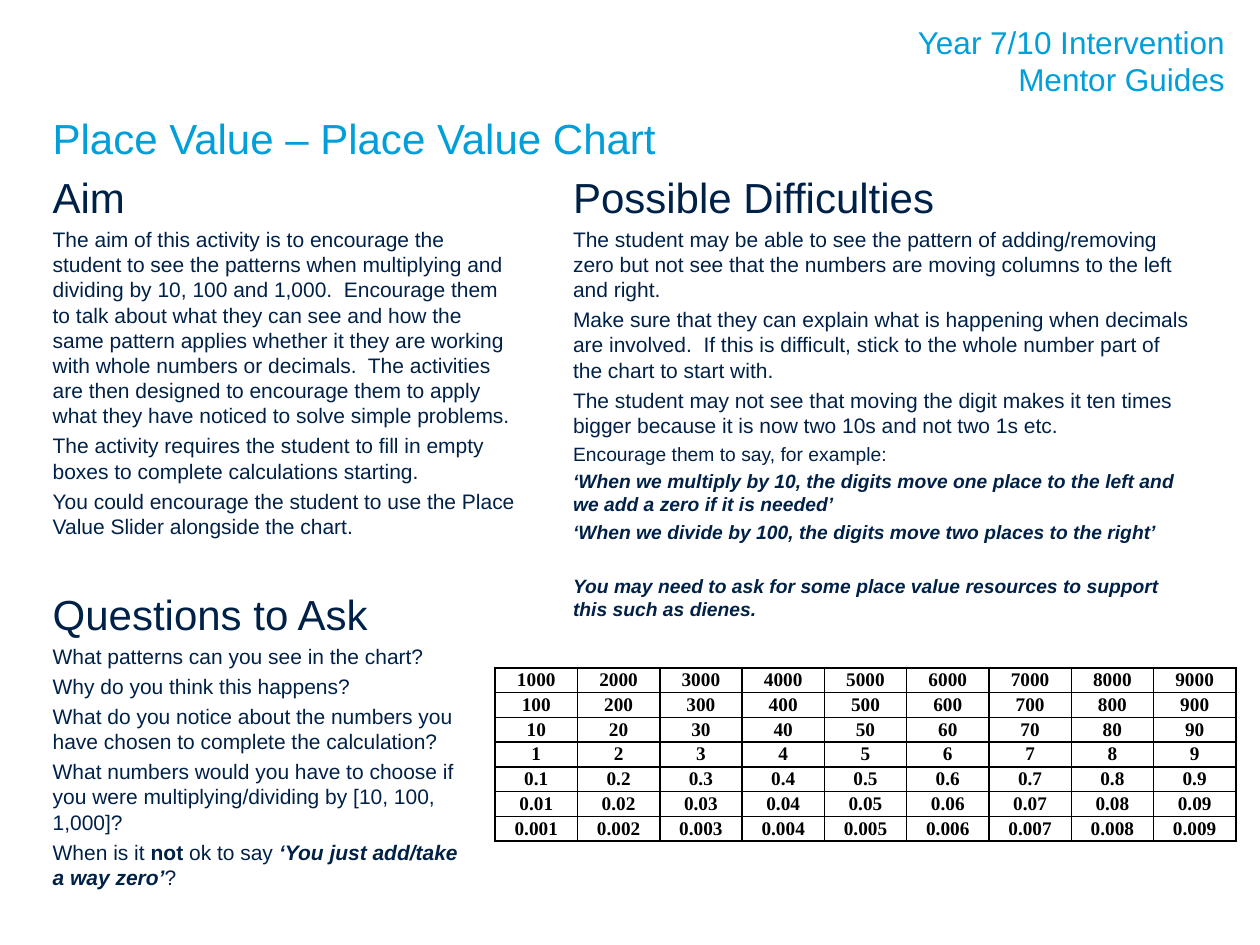
from dataclasses import dataclass, field

from lxml import etree
from pptx import Presentation
from pptx import util as u
from pptx.dml.color import RGBColor
from pptx.enum import text
from pptx.oxml import ns

COLOURS = {"heading": "009FDA", "body": "002147", "table": "000000"}
BODY_FONT = "Arial"
TABLE_FONT = "Times New Roman"
LINE_HEIGHT = 1.15
SPACE_SHARE = 0.2


@dataclass
class Run:
    words: str
    bold: bool = False
    italic: bool = False


@dataclass
class Paragraph:
    runs: list[Run]
    size: float = 12
    skip_line: bool = False


@dataclass
class TextPanel:
    left: float
    top: float
    width: float
    height: float
    paragraphs: list[Paragraph] = field(default_factory=list)
    colour: str = "body"
    alignment: text.PP_ALIGN = text.PP_ALIGN.LEFT


def plain(words: str, size: float = 12) -> Paragraph:
    return Paragraph([Run(words)], size)


def emphasised(words: str, skip_line: bool = False) -> Paragraph:
    return Paragraph([Run(words, True, True)], 11, skip_line)


PANELS = [
    TextPanel(0.32, 0.84, 9, 0.64, [plain("Place Value – Place Value Chart", 24)], "heading"),
    TextPanel(0.32, 1.31, 3.87, 3.31, [
        plain("Aim", 24),
        plain("The aim of this activity is to encourage the student to see the patterns "
              "when multiplying and dividing by 10, 100 and 1,000.  Encourage them to talk "
              "about what they can see and how the same pattern applies whether it they are "
              "working with whole numbers or decimals.  The activities are then designed to "
              "encourage them to apply what they have noticed to solve simple problems."),
        plain("The activity requires the student to fill in empty boxes to complete "
              "calculations starting."),
        plain("You could encourage the student to use the Place Value Slider alongside "
              "the chart."),
    ]),
    TextPanel(0.32, 4.62, 3.44, 2.54, [
        plain("Questions to Ask", 24),
        plain("What patterns can you see in the chart?"),
        plain("Why do you think this happens?"),
        plain("What do you notice about the numbers you have chosen to complete the "
              "calculation?"),
        plain("What numbers would you have to choose if you were multiplying/dividing by "
              "[10, 100, 1,000]?"),
        Paragraph([
            Run("When is it "),
            Run("not", bold=True),
            Run(" ok to say "),
            Run("‘You just add/take a way zero’", bold=True, italic=True),
            Run("?"),
        ]),
    ]),
    TextPanel(4.45, 1.31, 5.13, 3.73, [
        plain("Possible Difficulties", 24),
        plain("The student may be able to see the pattern of adding/removing zero but not "
              "see that the numbers are moving columns to the left and right."),
        plain("Make sure that they can explain what is happening when decimals are "
              "involved.  If this is difficult, stick to the whole number part of the chart "
              "to start with."),
        plain("The student may not see that moving the digit makes it ten times bigger "
              "because it is now two 10s and not two 1s etc."),
        plain("Encourage them to say, for example:", 11),
        emphasised("‘When we multiply by 10, the digits move one place to the left and we "
                   "add a zero if it is needed’"),
        emphasised("‘When we divide by 100, the digits move two places to the right’"),
        emphasised("You may need to ask for some place value resources to support this "
                   "such as dienes.", skip_line=True),
    ]),
    TextPanel(6.42, 0.13, 3.4, 0.71, [plain("Year 7/10 Intervention\nMentor Guides", 18)],
              "heading", text.PP_ALIGN.RIGHT),
]


def style_font(font, name: str, size: float, colour: str, bold: bool, italic: bool) -> None:
    font.name = name
    font.size = u.Pt(size)
    font.bold = bold
    font.italic = italic
    font.color.rgb = RGBColor.from_string(COLOURS[colour])


def space_before(content: Paragraph) -> float:
    """Return a share of the line height, plus a whole line where one is skipped."""
    line = content.size * LINE_HEIGHT
    gap = line * SPACE_SHARE
    return round(2 * gap + line if content.skip_line else gap, 2)


def add_panel(slide, panel: TextPanel) -> None:
    shape = slide.shapes.add_textbox(u.Inches(panel.left), u.Inches(panel.top),
                                     u.Inches(panel.width), u.Inches(panel.height))
    frame = shape.text_frame
    frame.word_wrap = True
    for index, content in enumerate(panel.paragraphs):
        paragraph = frame.add_paragraph() if index else frame.paragraphs[0]
        paragraph.alignment = panel.alignment
        if index:
            paragraph.space_before = u.Pt(space_before(content))
        for part in content.runs:
            for number, line in enumerate(part.words.split("\n")):
                if number:
                    paragraph.add_line_break()
                run = paragraph.add_run()
                run.text = line
                style_font(run.font, BODY_FONT, content.size, panel.colour,
                           part.bold, part.italic)


def add_borders(cell) -> None:
    properties = cell._tc.get_or_add_tcPr()
    for side in ("lnL", "lnR", "lnT", "lnB"):
        line = etree.SubElement(properties, ns.qn(f"a:{side}"), w=str(u.Pt(1)))
        fill = etree.SubElement(line, ns.qn("a:solidFill"))
        etree.SubElement(fill, ns.qn("a:srgbClr"), val=COLOURS["table"])


def add_place_value_chart(slide) -> None:
    """Draw the digits 1 to 9 in each place from thousands to thousandths."""
    powers = range(3, -4, -1)
    digits = range(1, 10)
    width, row_height = 5.88, 0.18
    table = slide.shapes.add_table(
        len(powers), len(digits), u.Inches(3.93), u.Inches(5.3),
        u.Inches(width), u.Inches(row_height * len(powers))).table
    table.first_row = False
    table.horz_banding = False
    for column in table.columns:
        column.width = u.Inches(width / len(digits))
    for row, power in zip(table.rows, powers):
        row.height = u.Inches(row_height)
        for cell, digit in zip(row.cells, digits):
            cell.margin_left = cell.margin_right = u.Inches(0.07)
            cell.margin_top = cell.margin_bottom = 0
            add_borders(cell)
            cell.fill.background()
            paragraph = cell.text_frame.paragraphs[0]
            paragraph.alignment = text.PP_ALIGN.CENTER
            paragraph.line_spacing = 1.07
            run = paragraph.add_run()
            run.text = f"{digit * 10 ** power:.{max(0, -power)}f}"
            style_font(run.font, TABLE_FONT, 11, "table", True, False)


def main() -> None:
    presentation = Presentation()
    presentation.slide_width = u.Inches(10)
    presentation.slide_height = u.Inches(7.5)
    slide = presentation.slides.add_slide(presentation.slide_layouts[6])
    for panel in PANELS:
        add_panel(slide, panel)
    add_place_value_chart(slide)
    presentation.save("out.pptx")


if __name__ == "__main__":
    main()
